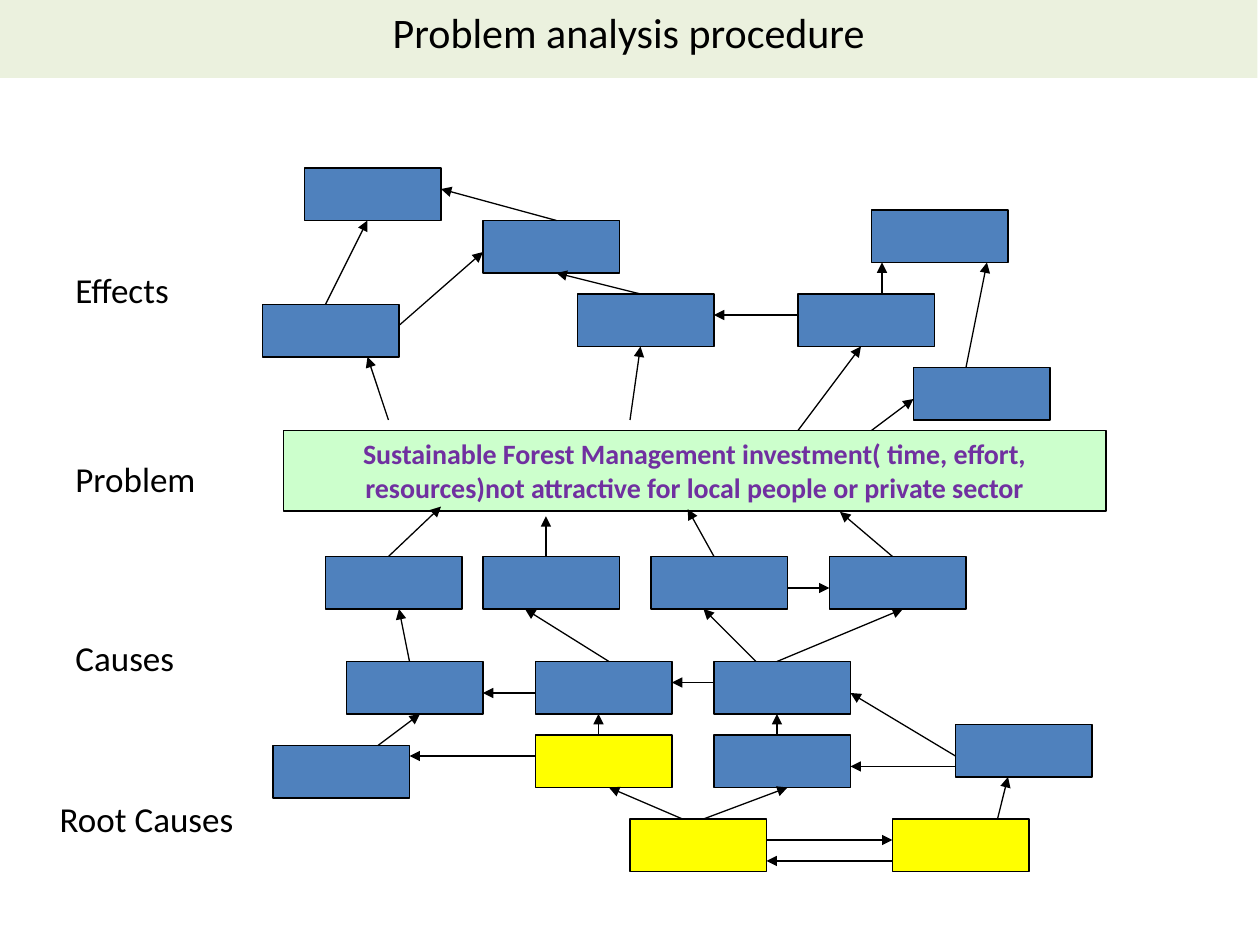
from pptx import Presentation
from pptx.dml.color import RGBColor
from pptx.enum.shapes import MSO_CONNECTOR, MSO_SHAPE
from pptx.enum.text import MSO_ANCHOR, PP_ALIGN
from pptx.oxml.ns import qn
from pptx.util import Pt
from lxml.etree import SubElement

COLORS = {
    "black": "000000", "white": "FFFFFF", "blue": "4F81BD", "yellow": "FFFF00",
    "mint": "CCFFCC", "purple": "7030A0", "sage": "EBF1DE",
}


def color(name):
    return RGBColor.from_string(COLORS[name])


class ProblemTree:
    font = "Calibri"
    line_width = 0.75
    box_width, box_height = 78, 30

    def __init__(self, slide):
        self.slide = slide

    def set_text(self, shape, text, size, font_color="black", bold=False, align=PP_ALIGN.LEFT):
        text_frame = shape.text_frame
        text_frame.word_wrap = True
        text_frame.vertical_anchor = MSO_ANCHOR.TOP
        text_frame.text = text
        paragraph = text_frame.paragraphs[0]
        paragraph.alignment = align
        font = paragraph.runs[0].font
        font.name, font.size, font.bold = self.font, Pt(size), bold
        font.color.rgb = color(font_color)

    def rectangle(self, left, top, width, height, fill, outlined=True):
        shape = self.slide.shapes.add_shape(
            MSO_SHAPE.RECTANGLE, Pt(left), Pt(top), Pt(width), Pt(height))
        shape.shadow.inherit = False
        shape.fill.solid()
        shape.fill.fore_color.rgb = color(fill)
        if outlined:
            shape.line.color.rgb = color("black")
            shape.line.width = Pt(self.line_width)
        else:
            shape.line.fill.background()
        return shape

    def box(self, left, top, fill="blue"):
        return self.rectangle(left, top, self.box_width, self.box_height, fill)

    def label(self, left, top, width, text):
        shape = self.slide.shapes.add_textbox(Pt(left), Pt(top), Pt(width), Pt(31))
        self.set_text(shape, text, 20)

    def arrow(self, x1, y1, x2, y2):
        connector = self.slide.shapes.add_connector(
            MSO_CONNECTOR.STRAIGHT, Pt(x1), Pt(y1), Pt(x2), Pt(y2))
        connector.line.color.rgb = color("black")
        connector.line.width = Pt(self.line_width)
        properties = connector.element.spPr
        SubElement(properties.find(qn("a:ln")), qn("a:tailEnd"), type="triangle")
        SubElement(properties, qn("a:effectLst"))


BLUE_BOXES = [
    # Effects
    (174, 96), (150, 174), (276, 126), (330, 168), (522, 210), (456, 168), (498, 120),
    # Causes
    (186, 318), (276, 318), (372, 318), (474, 318),
    (198, 378), (306, 378), (408, 378),
    (156, 426), (408, 420), (546, 414),
]
ROOT_CAUSE_BOXES = [(306, 420), (360, 468), (510, 468)]

ARROWS = [
    # Problem to effects
    (222, 240, 210, 204), (360, 240, 366, 198), (456, 246, 492, 198), (498, 246, 522, 228),
    # Between effects
    (366, 168, 318, 156), (456, 180, 408, 180), (552, 210, 564, 150), (504, 168, 504, 150),
    (228, 186, 276, 144), (186, 174, 210, 126), (318, 126, 252, 108),
    # Causes to problem
    (222, 318, 252, 289.5), (312, 318, 312, 295), (408, 318, 393, 291), (510, 318, 480, 292.5),
    # Between causes
    (444, 378, 516, 348), (432, 378, 402, 348), (450, 336, 474, 336), (348, 378, 300, 348),
    (234, 378, 228, 348), (306, 396, 276, 396), (408, 390, 384, 390),
    (216, 426, 240, 408), (444, 420, 444, 408), (546, 438, 486, 438), (546, 432, 486, 396),
    # From root causes
    (342, 420, 342, 408), (306, 432, 234, 432), (402, 468, 450, 450), (390, 468, 348, 450),
    (570, 468, 576, 444), (438, 480, 510, 480), (510, 492, 438, 492),
]


def main():
    presentation = Presentation()
    presentation.slide_width, presentation.slide_height = Pt(720), Pt(540)
    tree = ProblemTree(presentation.slides.add_slide(presentation.slide_layouts[6]))

    # Central problem
    problem = tree.rectangle(162, 246, 470, 46, "mint")
    tree.set_text(problem, "Sustainable Forest Management investment( time, effort, "
                  "resources)not attractive for local people or private sector",
                  16, "purple", True, PP_ALIGN.CENTER)

    # Level labels
    for text, top in [("Problem", 258), ("Causes", 360), ("Effects", 150)]:
        tree.label(36, top, 90, text)
    root_causes = tree.rectangle(27, 452, 303, 32, "white", outlined=False)
    tree.set_text(root_causes, "Root Causes", 20)

    # Boxes of the tree
    for left, top in BLUE_BOXES:
        tree.box(left, top)
    for left, top in ROOT_CAUSE_BOXES:
        tree.box(left, top, "yellow")

    # Cause and effect arrows
    for ends in ARROWS:
        tree.arrow(*ends)

    # Title band
    title = tree.rectangle(0, 0, 718.5, 44.5, "sage", outlined=False)
    tree.set_text(title, "Problem analysis procedure", 24, align=PP_ALIGN.CENTER)

    presentation.save("out.pptx")


if __name__ == "__main__":
    main()
